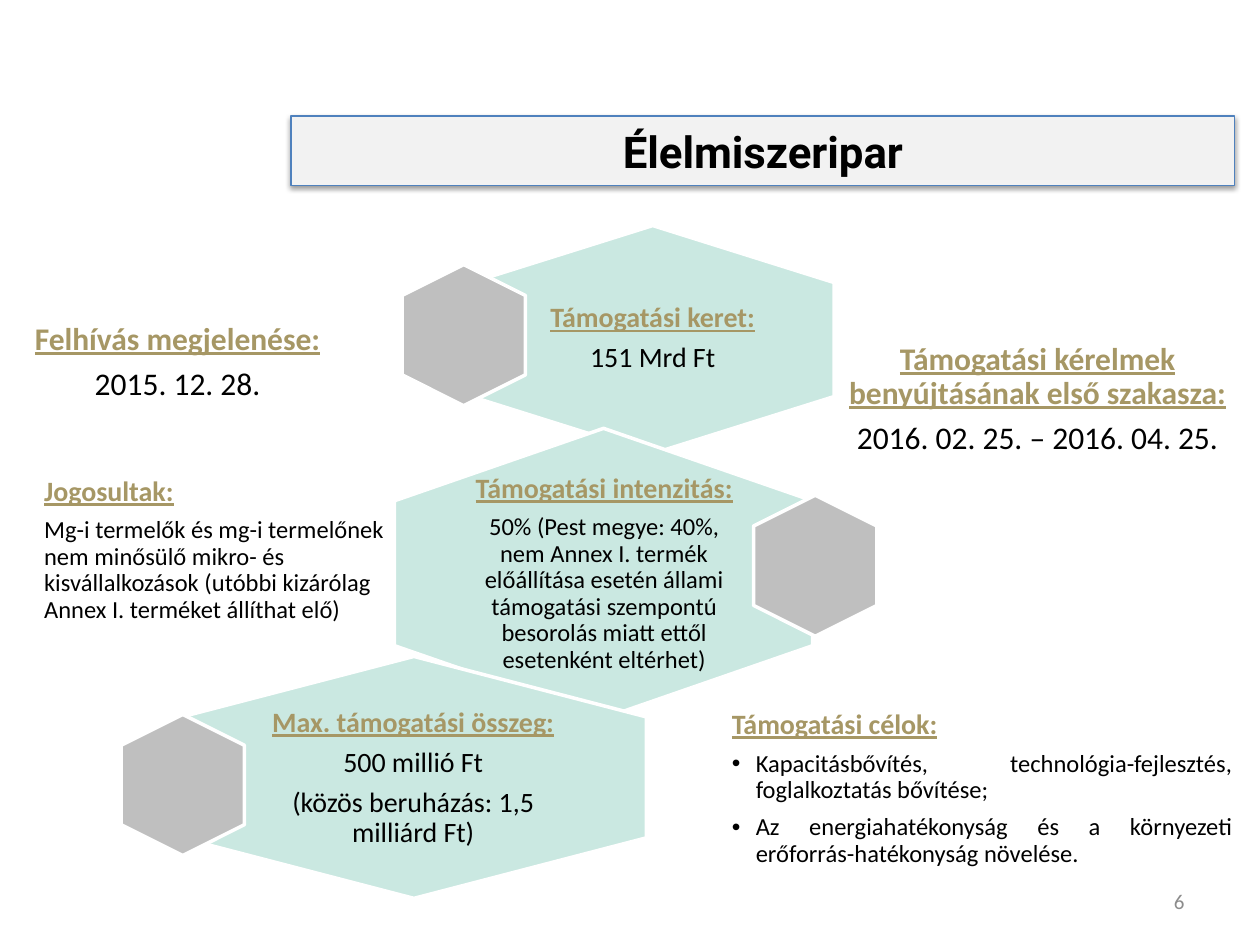
from lxml import etree
from pptx import Presentation
from pptx.dml.color import RGBColor
from pptx.enum.shapes import MSO_SHAPE
from pptx.enum.text import MSO_ANCHOR, PP_ALIGN
from pptx.oxml.ns import qn
from pptx.util import Inches, Pt

HEXAGON, RECTANGLE = MSO_SHAPE.HEXAGON, MSO_SHAPE.RECTANGLE
TOP, MIDDLE = MSO_ANCHOR.TOP, MSO_ANCHOR.MIDDLE
LEFT, CENTER, RIGHT, JUSTIFY = PP_ALIGN.LEFT, PP_ALIGN.CENTER, PP_ALIGN.RIGHT, PP_ALIGN.JUSTIFY
GOLD, BLACK, MINT, GRAY, WHITE = "A69765", "000000", "CAE8E1", "BFBFBF", "FFFFFF"
SMALL_SIZE = (0.98, 1.12)

STEPS = [
    ((3.74, 1.79, 2.88, 1.81), (3.19, 2.1), (4.22, 2.09, 1.92, 1.2),
     "Támogatási keret:", ["151 Mrd Ft"], 16),
    ((3.13, 3.4, 3.32, 2.3), (5.98, 3.93), (3.69, 3.79, 2.21, 1.53),
     "Támogatási intenzitás:",
     ["50% (Pest megye: 40%, nem Annex I. termék előállítása esetén állami "
      "támogatási szempontú besorolás miatt ettől esetenként eltérhet)"], 14),
    ((1.44, 5.21, 3.69, 1.92), (0.96, 5.67), (2.05, 5.54, 2.46, 1.28),
     "Max. támogatási összeg:", ["500 millió Ft", "(közös beruházás: 1,5 milliárd Ft)"], 16),
]
SIDE_NOTES = [
    ((6.64, 2.67, 3.19, 1), "Támogatási kérelmek benyújtásának első szakasza:",
     "2016. 02. 25. – 2016. 04. 25.", 18, 18, CENTER),
    ((0.28, 3.52, 2.91, 1.7), "Jogosultak:",
     "Mg-i termelők és mg-i termelőnek nem minősülő mikro- és kisvállalkozások "
     "(utóbbi kizárólag Annex I. terméket állíthat elő)", 16, 14, LEFT),
    ((0.2, 2.41, 2.42, 0.94), "Felhívás megjelenése:", "2015. 12. 28.", 18, 18, CENTER),
]
GOALS = [
    "Kapacitásbővítés, technológia-fejlesztés, foglalkoztatás bővítése;",
    "Az energiahatékonyság és a környezeti erőforrás-hatékonyság növelése.",
]


def color(value):
    """Turn a hex string into a colour."""
    return RGBColor.from_string(value)


def inches(*lengths):
    """Convert several lengths to inches."""
    return [Inches(length) for length in lengths]


def set_font(paragraph, size, value, name="Calibri", bold=False, underline=False):
    """Set the font of a whole paragraph."""
    font = paragraph.font
    font.name, font.size, font.bold, font.underline = name, Pt(size), bold, underline
    font.color.rgb = color(value)


def add_bullet(paragraph):
    """Give a paragraph a hanging round bullet."""
    properties = paragraph._p.get_or_add_pPr()
    properties.set("marL", str(Inches(0.19)))
    properties.set("indent", str(Inches(-0.19)))
    etree.SubElement(properties, qn("a:buFont")).set("typeface", "Arial")
    etree.SubElement(properties, qn("a:buChar")).set("char", "•")


def add_text_box(slide, box, anchor, side=0.07, edge=0.07):
    """Add an empty wrapping text box and return its frame."""
    frame = slide.shapes.add_textbox(*inches(*box)).text_frame
    frame.word_wrap = True
    frame.vertical_anchor = anchor
    frame.margin_left = frame.margin_right = Inches(side)
    frame.margin_top = frame.margin_bottom = Inches(edge)
    return frame


def fill_note(frame, heading, lines, heading_size, body_size, alignment, bulleted=False):
    """Write an underlined heading and the lines below it."""
    for index, text in enumerate([heading, *lines]):
        paragraph = frame.add_paragraph() if index else frame.paragraphs[0]
        size = body_size if index else heading_size
        paragraph.text = text
        paragraph.alignment = alignment
        paragraph.line_spacing = 0.9
        paragraph.space_after = Pt(6 if bulleted else round(size * 0.35, 1))
        if bulleted and index:
            add_bullet(paragraph)
        set_font(paragraph, size, BLACK if index else GOLD, bold=not index, underline=not index)


def add_hexagon(slide, box, fill):
    """Draw a hexagon standing on its tip inside the visible box."""
    left, top, width, height = box
    shift = (width - height) / 2
    shape = slide.shapes.add_shape(HEXAGON, *inches(left + shift, top - shift, height, width))
    shape.rotation = 90
    shape.shadow.inherit = False
    shape.fill.solid()
    shape.fill.fore_color.rgb = color(fill)
    shape.line.color.rgb = color(WHITE)
    shape.line.width = Pt(2)


def add_step(slide, box, small_corner, text_box, heading, lines, body_size):
    """Place a large hexagon with its text and its small companion."""
    add_hexagon(slide, box, MINT)
    fill_note(add_text_box(slide, text_box, MIDDLE), heading, lines, 16, body_size, CENTER)
    add_hexagon(slide, (*small_corner, *SMALL_SIZE), GRAY)


def add_side_note(slide, box, heading, body, heading_size, body_size, alignment):
    """Place a note beside the hexagons."""
    frame = add_text_box(slide, box, MIDDLE)
    fill_note(frame, heading, [body], heading_size, body_size, alignment)


def add_goals(slide, box):
    """Place the bulleted list of goals."""
    frame = add_text_box(slide, box, TOP, 0.1, 0.05)
    fill_note(frame, "Támogatási célok:", GOALS, 16, 14, JUSTIFY, bulleted=True)


def add_title(slide, box):
    """Place the shadowed title bar."""
    shape = slide.shapes.add_shape(RECTANGLE, *inches(*box))
    shape.fill.solid()
    shape.fill.fore_color.rgb = color("F2F2F2")
    shape.line.color.rgb = color("4F81BD")
    shape.line.width = Pt(0.75)
    shape.shadow.inherit = False
    effects = shape._element.spPr.find(qn("a:effectLst"))
    shadow = etree.SubElement(effects, qn("a:outerShdw"), blurRad=str(Pt(3.1)),
                              dist=str(Pt(1.6)), dir="5400000", rotWithShape="0")
    shade = etree.SubElement(shadow, qn("a:srgbClr"), val=BLACK)
    etree.SubElement(shade, qn("a:alpha"), val="38000")
    paragraph = shape.text_frame.paragraphs[0]
    paragraph.text = "Élelmiszeripar"
    paragraph.alignment = CENTER
    set_font(paragraph, 25, BLACK, "Roboto", bold=True)


def add_page_number(slide, box):
    """Place the page number."""
    paragraph = add_text_box(slide, box, MIDDLE, 0.1, 0.05).paragraphs[0]
    paragraph.text = "6"
    paragraph.alignment = RIGHT
    set_font(paragraph, 12, "8C8C8C")


def main():
    """Build and save the slide."""
    presentation = Presentation()
    presentation.slide_width, presentation.slide_height = inches(10, 7.5)
    slide = presentation.slides.add_slide(presentation.slide_layouts[6])
    add_page_number(slide, (7.17, 6.95, 2.33, 0.4))
    for step in STEPS:
        add_step(slide, *step)
    for note in SIDE_NOTES:
        add_side_note(slide, *note)
    add_goals(slide, (5.71, 5.59, 4.17, 1.36))
    add_title(slide, (2.31, 0.92, 7.49, 0.55))
    presentation.save("out.pptx")


if __name__ == "__main__":
    main()
